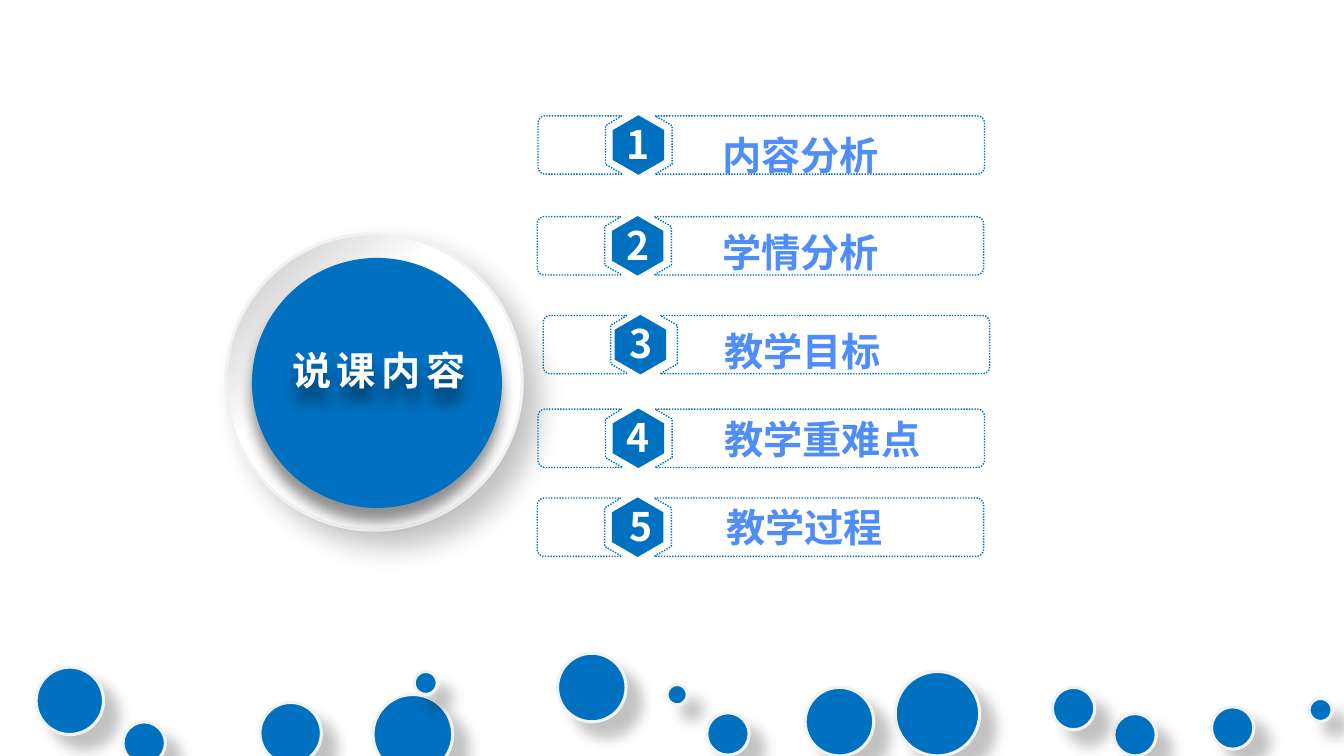
import math
from dataclasses import dataclass

from lxml import etree
from pptx import Presentation
from pptx import util as u
from pptx.dml import color
from pptx.enum import dml, shapes, text
from pptx.oxml import ns


@dataclass(frozen=True)
class Theme:
    blue: str = "0070C0"
    label: str = "4F8EFA"
    white: str = "FFFFFF"
    rim: str = "F2F2F2"
    grey: str = "BFBFBF"
    black: str = "000000"
    font: str = "Noto Sans CJK SC"
    size: int = 28
    edge: float = 2.25
    dash: float = 1


THEME = Theme()

# Shadows: opacity %, blur pt, distance pt, angle
SOFT = (23, 10, 15, 45)
WIDE = (23, 20, 15, 45)
DROP = (43, 10, 10, 90)

# Dots: left, top, diameter in cm
DOTS = [
    (6.55, 17.7, 1.55), (14.05, 16.46, 1.73), (22.56, 16.92, 2.13),
    (17.81, 17.96, 1.07), (0.91, 16.81, 1.7), (9.4, 17.5, 2.01),
    (20.29, 17.32, 1.73), (10.44, 16.92, 0.58), (3.1, 18.19, 1.07),
    (28.07, 17.98, 1.07), (16.81, 17.25, 0.51), (32.99, 17.6, 0.58),
    (26.52, 17.32, 1.07), (30.53, 17.81, 1.07),
]

# Rows: label, frame left, frame top, hexagon centre, digit left, label left, label top
ROWS = [
    ("内容分析", 13.56, 2.92, 16.09, 15.54, 17.96, 3.18),
    ("学情分析", 13.54, 5.46, 16.07, 15.54, 17.96, 5.64),
    ("教学目标", 13.69, 7.95, 16.14, 15.62, 18.01, 8.13),
    ("教学重难点", 13.56, 10.31, 16.09, 15.54, 18.01, 10.34),
    ("教学过程", 13.54, 12.55, 16.07, 15.62, 18.06, 12.57),
]
WIDTH, HEIGHT, ROUND = 11.25, 1.47, 0.18


def rgb(code):
    return color.RGBColor.from_string(code)


def node(parent, tag, **attrs):
    return etree.SubElement(parent, ns.qn(tag), {k: str(v) for k, v in attrs.items()})


def paint(shape, fill=None, line=None, width=1, dash=None):
    shape.shadow.inherit = False
    if fill:
        shape.fill.solid()
        shape.fill.fore_color.rgb = rgb(fill)
    else:
        shape.fill.background()
    if line:
        shape.line.color.rgb = rgb(line)
        shape.line.width = u.Pt(width)
        if dash:
            shape.line.dash_style = dash
    else:
        shape.line.fill.background()


def shade(shape, alpha, blur, dist, angle):
    shape.shadow.inherit = False
    effect = shape._element.spPr.find(ns.qn("a:effectLst"))
    cast = node(effect, "a:outerShdw", blurRad=u.Pt(blur), dist=u.Pt(dist),
                dir=angle * 60000, algn="ctr", rotWithShape=0)
    tint = node(cast, "a:srgbClr", val=THEME.black)
    node(tint, "a:alpha", val=alpha * 1000)


def blend(shape, stops, angle):
    """Fill a shape with a linear gradient."""
    shape.fill.gradient()
    grad = shape._element.spPr.find(ns.qn("a:gradFill"))
    for child in list(grad):
        grad.remove(child)
    items = node(grad, "a:gsLst")
    for place, code in stops:
        node(node(items, "a:gs", pos=place * 1000), "a:srgbClr", val=code)
    node(grad, "a:lin", ang=angle * 60000, scaled=0)


def disc(slide, left, top, size, shadow, line=None):
    shape = slide.shapes.add_shape(shapes.MSO_SHAPE.OVAL, u.Cm(left), u.Cm(top),
                                   u.Cm(size), u.Cm(size))
    paint(shape, THEME.blue, line, THEME.edge)
    shade(shape, *shadow)
    return shape


def write(box, words, tint=THEME.white, size=THEME.size, gap=0):
    frame = box.text_frame
    frame.word_wrap = True
    frame.auto_size = text.MSO_AUTO_SIZE.NONE
    frame.vertical_anchor = text.MSO_ANCHOR.TOP
    para = frame.paragraphs[0]
    para.alignment = text.PP_ALIGN.LEFT
    run = para.add_run()
    run.text = words
    run.font.name = THEME.font
    run.font.size = u.Pt(size)
    run.font.bold = True
    run.font.color.rgb = rgb(tint)
    props = run._r.get_or_add_rPr()
    node(props, "a:ea", typeface=THEME.font)
    if gap:
        props.set("spc", str(gap * 100))


def place(box, left, top, width, height):
    box.left, box.top, box.width, box.height = map(u.Cm, (left, top, width, height))


def label(parent, words, left, top, width, **style):
    box = parent.shapes.add_textbox(0, 0, 0, 0)
    place(box, left, top, width, 1.45)
    write(box, words, **style)


def outline(parent, *paths):
    """Build one freeform from closed paths given in cm."""
    paths = [[(u.Cm(x), u.Cm(y)) for x, y in path] for path in paths]
    maker = parent.shapes.build_freeform(*paths[0][0])
    for index, path in enumerate(paths):
        if index:
            maker.move_to(*path[0])
        maker.add_line_segments(path[1:], close=True)
    return maker.convert_to_shape()


def bend(x, y, start):
    """Quarter circle around a centre, clockwise from an angle."""
    turns = [math.radians(start + 15 * step) for step in range(7)]
    return [(x + ROUND * math.cos(a), y + ROUND * math.sin(a)) for a in turns]


def frame(parent, left, top):
    low, far = HEIGHT - ROUND, WIDTH - ROUND
    near = [(2.11, 0), (1.7, 0.25), (1.7, 1.22), (2.13, HEIGHT)]
    near += bend(ROUND, low, 90) + bend(ROUND, ROUND, 180)
    rest = [(2.95, 0)] + bend(far, ROUND, 270) + bend(far, low, 0)
    rest += [(2.95, HEIGHT), (3.38, 1.22), (3.38, 0.25)]
    shape = outline(parent, *[[(left + x, top + y) for x, y in path]
                              for path in (near, rest)])
    paint(shape, line=THEME.blue, width=THEME.dash, dash=dml.MSO_LINE.ROUND_DOT)


def hexa(parent, x, y, radius=0.75):
    turns = [math.radians(60 * step - 90) for step in range(6)]
    shape = outline(parent, [(x + radius * math.cos(a), y + radius * math.sin(a))
                             for a in turns])
    paint(shape, THEME.blue)


def main():
    deck = Presentation()
    deck.slide_width, deck.slide_height = u.Cm(33.87), u.Cm(19.05)
    slide = deck.slides.add_slide(deck.slide_layouts[5])

    # Dots along the foot
    for dot in DOTS:
        disc(slide, *dot, SOFT, THEME.rim)

    # Ring and core
    ring = disc(slide, 5.69, 5.89, 7.47, WIDE, THEME.rim)
    blend(ring, [(0, THEME.grey), (37, THEME.white), (100, THEME.white)], 45)
    disc(slide, 6.35, 6.5, 6.3, DROP)

    # Title, raised above the core
    title = slide.shapes.title
    place(title, 7.11, 8.61, 5.6, 1.45)
    write(title, "说课内容", gap=4)
    shade(title, *DROP)
    slide.shapes._spTree.append(title._element)

    # Numbered rows
    for number, (words, left, top, mid, digit, start, head) in enumerate(ROWS, 1):
        group = slide.shapes.add_group_shape()
        frame(group, left, top)
        hexa(group, mid, top + HEIGHT / 2)
        label(group, str(number), digit, top - 0.02, 1.8)
        label(slide, words, start, head, 6, tint=THEME.label)

    deck.save("out.pptx")


if __name__ == "__main__":
    main()
